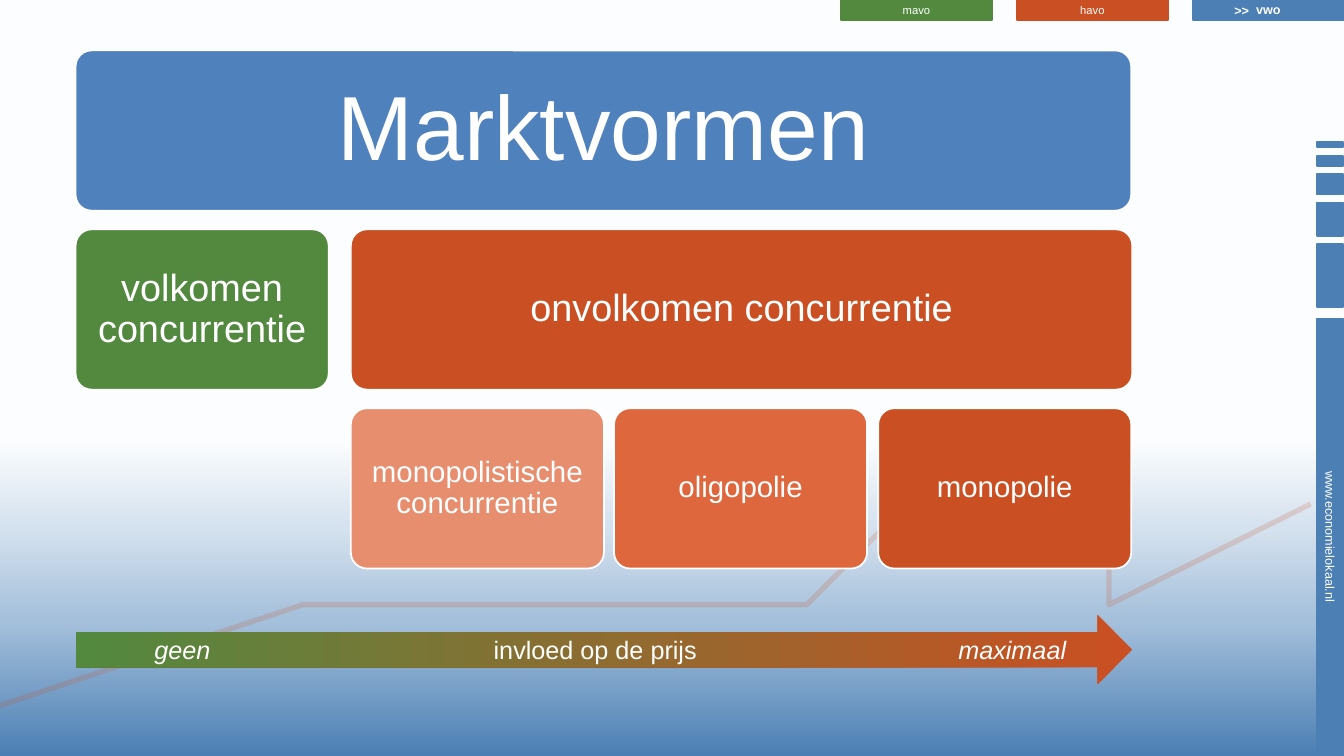
from lxml import etree
from pptx import Presentation
from pptx.dml.color import RGBColor
from pptx.enum.shapes import MSO_SHAPE
from pptx.enum.text import MSO_ANCHOR, PP_ALIGN
from pptx.oxml.ns import qn
from pptx.util import Inches, Pt

COLORS = {
    "white": "FFFFFF", "blue": "4C7FB4", "title blue": "4F81BD",
    "green": "52893F", "orange": "CA4F22",
    "light orange": "E78E6F", "mid orange": "DF673D",
}

prs = Presentation()
prs.slide_width, prs.slide_height = Inches(13.33), Inches(7.5)
slide = prs.slides.add_slide(prs.slide_layouts[6])


def rgb(name):
    return RGBColor.from_string(COLORS[name])


def add_box(kind, left, top, width, height, fill=None, line=None, text="",
            size=9, insets=(0.1, 0, 0.1, 0.01), bold=False, italic=False):
    """Add a shape with centred white text; no fill or line unless named."""
    box = slide.shapes.add_shape(
        kind, Inches(left), Inches(top), Inches(width), Inches(height))
    box.shadow.inherit = False
    if fill:
        box.fill.solid()
        box.fill.fore_color.rgb = rgb(fill)
    else:
        box.fill.background()
    if line:
        box.line.color.rgb = rgb(line)
        box.line.width = Pt(1.25)
    else:
        box.line.fill.background()
    if text:
        frame = box.text_frame
        frame.word_wrap = True
        frame.vertical_anchor = MSO_ANCHOR.MIDDLE
        (frame.margin_left, frame.margin_top,
         frame.margin_right, frame.margin_bottom) = map(Inches, insets)
        paragraph = frame.paragraphs[0]
        paragraph.text = text
        paragraph.alignment = PP_ALIGN.CENTER
        font = paragraph.font
        font.name, font.size = "Arial", Pt(size)
        font.bold, font.italic = bold, italic
        font.color.rgb = rgb("white")
    return box


# Background gradient, from blue at the bottom to white
background = slide.background.fill
background.gradient()
background.gradient_angle = 90
stop_list = slide.element.find(".//" + qn("a:gsLst"))
for stop in list(stop_list):
    stop_list.remove(stop)
for position, color in [(0, "4C7FB4"), (18, "A5C0DB"), (30, "D4E1EE"),
                        (42, "FCFDFE"), (50, "FFFFFF")]:
    stop = etree.SubElement(stop_list, qn("a:gs"), pos=str(position * 1000))
    etree.SubElement(stop, qn("a:srgbClr"), val=color)

# Sidebar: rotated bars, given by visible top and height
BAR_WIDTH, BAR_CENTER = 0.26, 13.19
for top, height, address in [
        (3.16, 4.33, "www.economielokaal.nl"), (2.42, 0.63, ""),
        (2.01, 0.33, ""), (1.73, 0.2, ""), (1.55, 0.1, ""), (1.41, 0.05, "")]:
    bar = add_box(MSO_SHAPE.RECTANGLE, BAR_CENTER - height / 2,
                  top + (height - BAR_WIDTH) / 2, height, BAR_WIDTH,
                  "blue", "blue", address)
    bar.rotation = 90

# School level tabs
for column, (level, color, size) in enumerate(
        [("mavo", "green", 8), ("havo", "orange", 8), ("vwo", "blue", 9)]):
    add_box(MSO_SHAPE.RECTANGLE, 8.34 + column * 1.745, 0, 1.5, 0.2,
            color, color, level, size, bold=level == "vwo")
add_box(MSO_SHAPE.RECTANGLE, 12.14, -0.02, 0.35, 0.25, text=">>",
        insets=(0, 0, 0, 0), bold=True)

# Faint trend line
trend_points = [(12.97, 4.62), (11.12, 5.51), (10.71, 5.37), (9.28, 5.49),
                (8.49, 5.66), (7.85, 5.57), (5.97, 5.68), (5.01, 6.03),
                (3.57, 6.15), (2.7, 6.38), (0.03, 7.13)]
builder = slide.shapes.build_freeform(
    *trend_points[0], scale=float(Inches(1)))
builder.add_line_segments(trend_points[1:], close=False)
trend = builder.convert_to_shape()
trend.shadow.inherit = False
trend.fill.background()
trend.line.color.rgb = rgb("orange")
trend.line.width = Pt(3.75)
trend_color = trend.line._get_or_add_ln().find(".//" + qn("a:srgbClr"))
etree.SubElement(trend_color, qn("a:alpha"), val="19000")

# Market forms: left, row, width, colour, text, size, inset
for left, row, width, color, text, size, inset in [
        (0.75, 0, 10.47, "title blue", "Marktvormen", 65, 0.27),
        (0.75, 1, 2.51, "green", "volkomen concurrentie", 27, 0.11),
        (3.48, 1, 7.75, "orange", "onvolkomen concurrentie", 27, 0.11),
        (3.48, 2, 2.51, "light orange", "monopolistische concurrentie", 21, 0.09),
        (6.09, 2, 2.51, "mid orange", "oligopolie", 21, 0.09),
        (8.71, 2, 2.51, "orange", "monopolie", 21, 0.09)]:
    card = add_box(MSO_SHAPE.ROUNDED_RECTANGLE, left, 0.5 + row * 1.775,
                   width, 1.59, color, "white", text, size, (inset,) * 4)
    card.adjustments[0] = 0.1
    card.text_frame.paragraphs[0].line_spacing = 0.9

# Price influence arrow
arrow = add_box(MSO_SHAPE.RIGHT_ARROW, 0.75, 6.1, 10.48, 0.69,
                text="invloed op de prijs", size=18, insets=(0.1, 0, 0.1, 0))
arrow.fill.gradient()
arrow.fill.gradient_angle = 180
for stop, color in zip(arrow.fill.gradient_stops, ("orange", "green")):
    stop.color.rgb = rgb(color)
for left, width, influence in [(1.43, 0.76, "geen"), (9.4, 1.28, "maximaal")]:
    add_box(MSO_SHAPE.RECTANGLE, left, 6.24, width, 0.4, text=influence,
            size=18, insets=(0.05, 0.05, 0.05, 0.05), italic=True)

prs.save("out.pptx")
